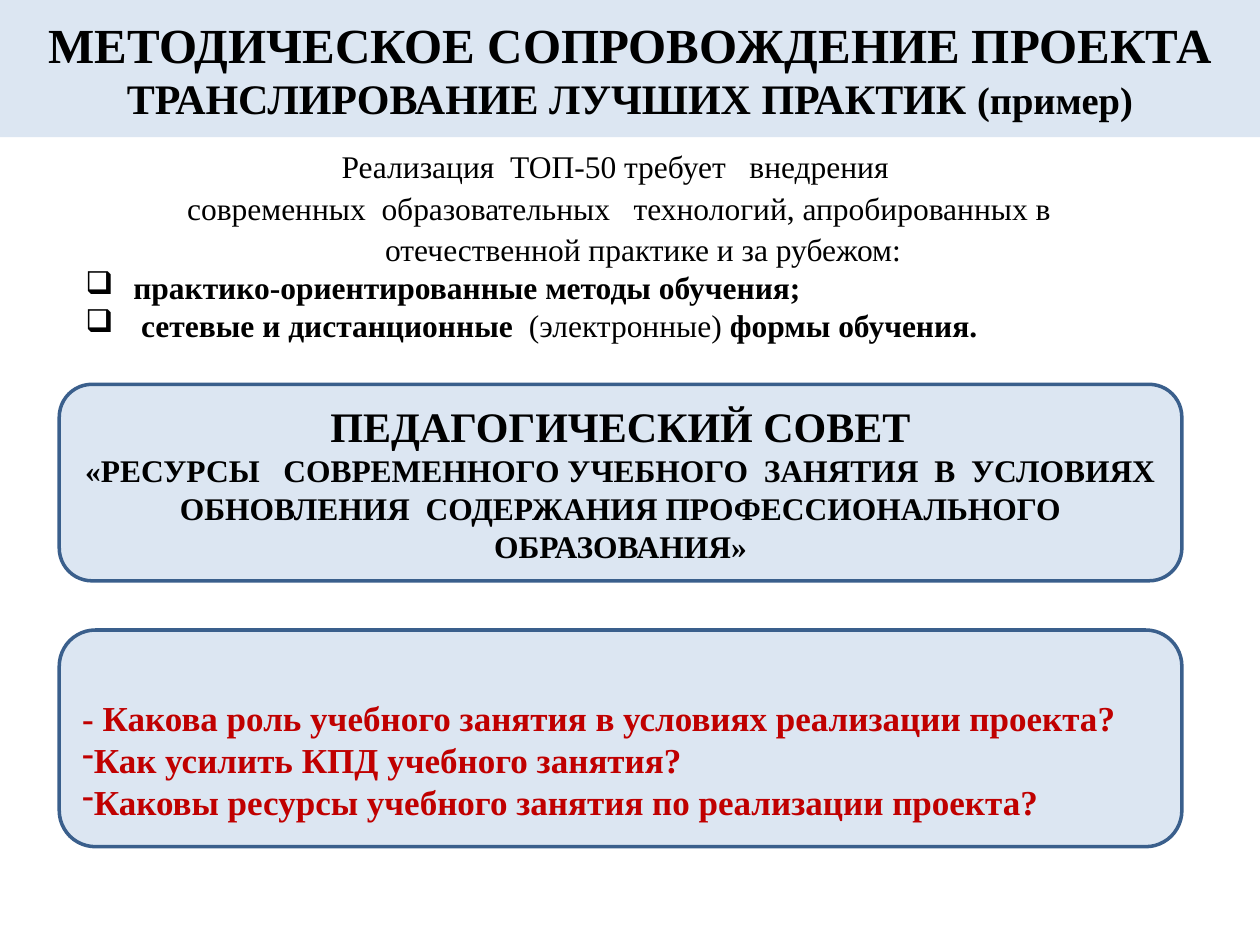
import pptx
import pptx.dml.color
import pptx.enum.shapes
import pptx.enum.text
import pptx.oxml.ns
import pptx.util
from lxml import etree

RGBColor = pptx.dml.color.RGBColor
PALE_BLUE = RGBColor(0xDC, 0xE6, 0xF2)
BORDER_BLUE = RGBColor(0x3A, 0x5F, 0x8C)
BLACK = RGBColor(0, 0, 0)
RED = RGBColor(0xC0, 0, 0)
FONT = "Times New Roman"
WIDTH, HEIGHT = pptx.util.Inches(10), pptx.util.Inches(7.5)
HEADER = 14.53
BOX_LEFT, BOX_WIDTH = 4.7, 89.1
ALIGN = pptx.enum.text.PP_ALIGN
SHAPE = pptx.enum.shapes.MSO_SHAPE


def place(left, top, width, height):
    return (int(WIDTH * left / 100), int(HEIGHT * top / 100),
            int(WIDTH * width / 100), int(HEIGHT * height / 100))


def add_run(p, text, size=18, bold=True, color=BLACK):
    r = p.add_run()
    r.text = text
    r.font.name = FONT
    r.font.size = pptx.util.Pt(size)
    r.font.bold = bold
    r.font.color.rgb = color


def add_paragraph(tf, *runs, align=ALIGN.CENTER, spacing=None, hang=0, bullet=None):
    p = tf.paragraphs[0]
    if p.runs:
        p = tf.add_paragraph()
    p.alignment = align
    p.line_spacing = spacing
    pPr = p._p.get_or_add_pPr()
    pPr.set("marL", str(pptx.util.Inches(hang)))
    pPr.set("indent", str(-pptx.util.Inches(hang)))
    if bullet:
        etree.SubElement(pPr, pptx.oxml.ns.qn("a:buChar")).set("char", bullet)
    for i, (text, fmt) in enumerate(runs):
        if i and fmt.get("size") != runs[i - 1][1].get("size") and fmt.pop("new_line", False):
            p.add_line_break()
        add_run(p, text, **fmt)


def add_panel(s, kind, box, border=None):
    sp = s.shapes.add_shape(kind, *place(*box))
    sp.shadow.inherit = False
    sp.fill.solid()
    sp.fill.fore_color.rgb = PALE_BLUE
    if border:
        sp.line.color.rgb = border
        sp.line.width = pptx.util.Pt(2)
    else:
        sp.line.fill.background()
    tf = sp.text_frame
    tf.word_wrap = True
    tf.vertical_anchor = pptx.enum.text.MSO_ANCHOR.MIDDLE
    return tf


def add_text(s, box):
    tf = s.shapes.add_textbox(*place(*box)).text_frame
    tf.word_wrap = True
    return tf


def add_header(s):
    tf = add_panel(s, SHAPE.RECTANGLE, (0, 0, 100, HEADER))
    add_paragraph(tf,
                  ("МЕТОДИЧЕСКОЕ СОПРОВОЖДЕНИЕ ПРОЕКТА", {"size": 28}),
                  ("ТРАНСЛИРОВАНИЕ ЛУЧШИХ ПРАКТИК ", {"size": 24, "new_line": True}),
                  ("(пример)", {"size": 22}))


def add_introduction(s):
    tf = add_text(s, (5.8, HEADER, 86.7, 75.47))
    for text in ("Реализация  ТОП-50 требует   внедрения ",
                 "современных  образовательных   технологий, апробированных в "
                 "отечественной практике и за рубежом:"):
        add_paragraph(tf, (text, {"bold": False}), spacing=1.1, hang=0.38)
    methods = [
        [("практико-ориентированные методы обучения;", {})],
        [(" ", {"bold": False}), ("сетевые и дистанционные  ", {}),
         ("(электронные)", {"bold": False}), (" формы обучения.", {})],
    ]
    for runs in methods:
        add_paragraph(tf, *runs, align=ALIGN.JUSTIFY, hang=0.38, bullet="❑")


def add_council(s):
    tf = add_panel(s, SHAPE.FLOWCHART_ALTERNATE_PROCESS,
                   (BOX_LEFT, 40.67, BOX_WIDTH, 20.8), BORDER_BLUE)
    add_paragraph(tf,
                  ("ПЕДАГОГИЧЕСКИЙ СОВЕТ", {"size": 24}),
                  ("«РЕСУРСЫ   СОВРЕМЕННОГО УЧЕБНОГО  ЗАНЯТИЯ  В  УСЛОВИЯХ "
                   "ОБНОВЛЕНИЯ  СОДЕРЖАНИЯ ПРОФЕССИОНАЛЬНОГО ОБРАЗОВАНИЯ»",
                   {"size": 18, "new_line": True}))


def add_questions(s):
    tf = add_panel(s, SHAPE.FLOWCHART_ALTERNATE_PROCESS,
                   (BOX_LEFT, 66.67, BOX_WIDTH, 22.93), BORDER_BLUE)
    tf.margin_top = pptx.util.Inches(0.38)
    fmt = {"size": 20, "color": RED}
    add_paragraph(tf, ("- Какова роль учебного занятия в условиях реализации проекта?", fmt),
                  align=ALIGN.LEFT)
    for text in ("Как усилить КПД учебного занятия?",
                 "Каковы ресурсы учебного занятия по реализации проекта?"):
        add_paragraph(tf, (text, fmt), align=ALIGN.JUSTIFY, bullet="-")


def main():
    prs = pptx.Presentation()
    prs.slide_width, prs.slide_height = WIDTH, HEIGHT
    s = prs.slides.add_slide(prs.slide_layouts[6])
    add_header(s)
    add_introduction(s)
    add_council(s)
    add_questions(s)
    prs.save("out.pptx")


if __name__ == "__main__":
    main()
